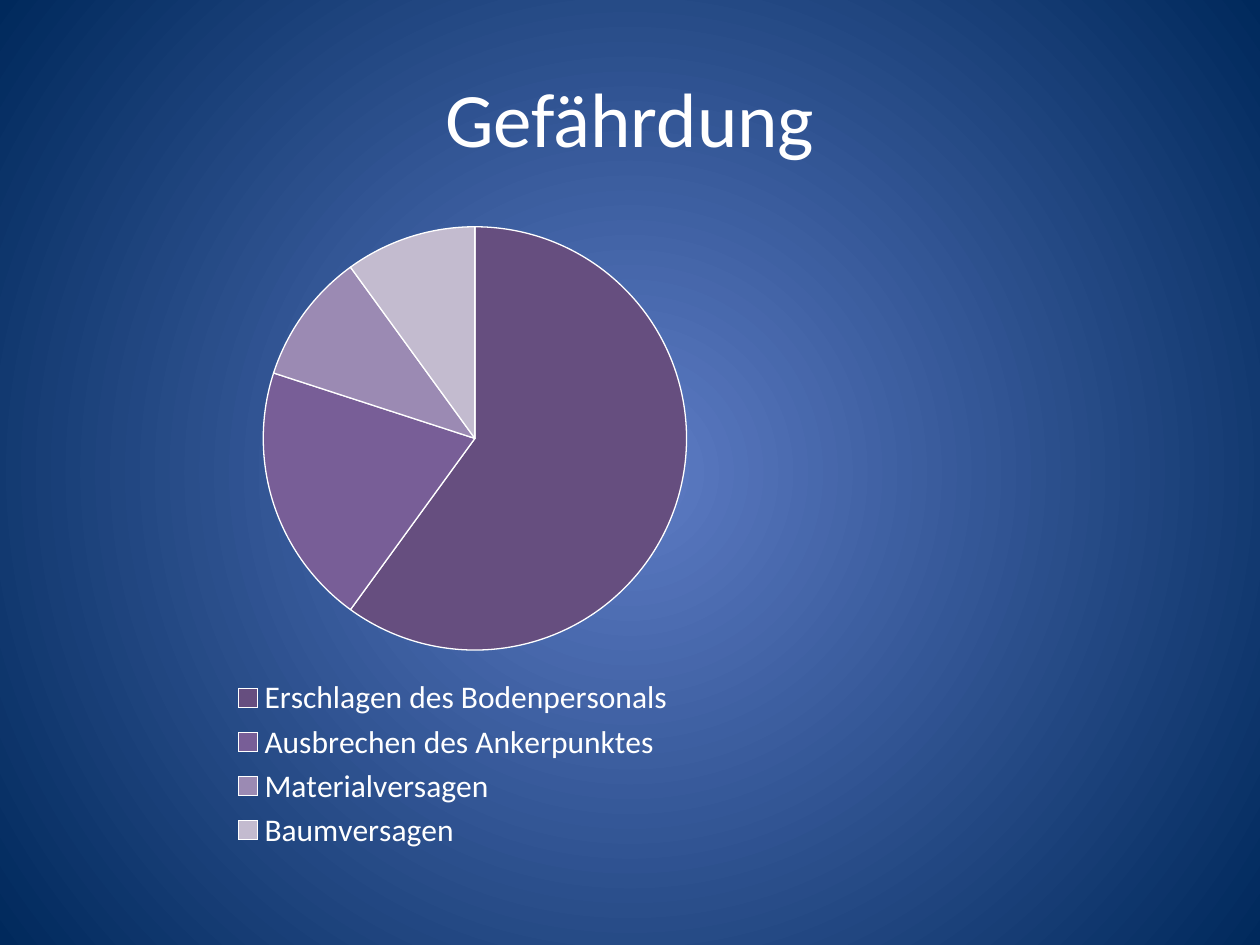
from lxml import etree
from pptx import Presentation
from pptx.chart.data import CategoryChartData
from pptx.dml.color import RGBColor
from pptx.enum.chart import XL_CHART_TYPE as CT, XL_LEGEND_POSITION as LP
from pptx.enum.text import MSO_ANCHOR, PP_ALIGN
from pptx.oxml.ns import qn
from pptx.util import Inches, Pt

COLORS = {
    "glow": "5E7CC5", "navy": "00295C", "white": "FFFFFF",
    "plum": "664E7F", "violet": "785E97", "mauve": "9B8AB3", "lilac": "C3BBCF",
}
RISKS = [
    ("Erschlagen des Bodenpersonals", 60, "plum"),
    ("Ausbrechen des Ankerpunktes", 20, "violet"),
    ("Materialversagen", 10, "mauve"),
    ("Baumversagen", 10, "lilac"),
]


def color(name):
    return RGBColor.from_string(COLORS[name])


class SlideBuilder:
    font = "Calibri"

    def __init__(self, prs):
        self.s = prs.slides.add_slide(prs.slide_layouts[5])

    def style(self, font, size):
        font.name, font.size = self.font, Pt(size)
        font.color.rgb = color("white")

    def background(self, inner, outer):
        fill = self.s.background.fill
        fill.gradient()
        for stop, name, pos in zip(fill.gradient_stops, (inner, outer), (0, 1)):
            stop.color.rgb = color(name)
            stop.position = pos
        # Radial path from the slide centre instead of a linear gradient
        grad = self.s.background._cSld.find(".//" + qn("a:gradFill"))
        lin = grad.find(qn("a:lin"))
        radial = etree.Element(qn("a:path"), {"path": "circle"})
        etree.SubElement(radial, qn("a:fillToRect"),
                         {side: "50000" for side in "ltrb"})
        grad.replace(lin, radial)

    def title(self, text, x, y, w, h):
        sp = self.s.shapes.title
        sp.left, sp.top, sp.width, sp.height = map(Inches, (x, y, w, h))
        tf = sp.text_frame
        tf.vertical_anchor = MSO_ANCHOR.MIDDLE
        p = tf.paragraphs[0]
        p.alignment = PP_ALIGN.CENTER
        r = p.add_run()
        r.text = text
        self.style(r.font, 44)

    def layout(self, parent, before, box, size, inner=False):
        """Place a chart part; box and chart size are in inches."""
        for old in parent.findall(qn("c:layout")):
            parent.remove(old)
        lay = etree.Element(qn("c:layout"))
        manual = etree.SubElement(lay, qn("c:manualLayout"))
        items = [("layoutTarget", "inner")] if inner else []
        items += [("xMode", "edge"), ("yMode", "edge")]
        items += [(tag, length / full)
                  for tag, length, full in zip("xywh", box, size * 2)]
        for tag, val in items:
            etree.SubElement(manual, qn("c:" + tag), val=str(val))
        parent.find(qn(before)).addprevious(lay)

    def pie(self, rows, x, y, w, h, plot_box, legend_box):
        data = CategoryChartData()
        data.categories = [name for name, _, _ in rows]
        data.add_series("Series 1", [value for _, value, _ in rows])
        chart = self.s.shapes.add_chart(
            CT.PIE, *map(Inches, (x, y, w, h)), data).chart
        chart.has_title = False
        self.style(chart.font, 18)

        # Slices
        plot = chart.plots[0]
        plot.vary_by_categories = True
        for i, (_, _, name) in enumerate(rows):
            fmt = plot.series[0].points[i].format
            fmt.fill.solid()
            fmt.fill.fore_color.rgb = color(name)
            fmt.line.color.rgb = color("white")
            fmt.line.width = Pt(0.75)

        # Legend below the pie
        chart.has_legend = True
        legend = chart.legend
        legend.position = LP.BOTTOM
        legend.include_in_layout = False
        self.style(legend.font, 18)
        self.layout(legend._element, "c:overlay", legend_box, (w, h))
        area = chart._chartSpace.find(".//" + qn("c:plotArea"))
        self.layout(area, "c:pieChart", plot_box, (w, h), inner=True)


def main():
    prs = Presentation()
    prs.slide_width, prs.slide_height = Inches(10), Inches(7.5)
    slide = SlideBuilder(prs)
    slide.background("glow", "navy")
    slide.title("Gefährdung", 0.5, 0.3, 9, 1.25)
    slide.pie(RISKS, 0.16, 1.56, 6.95, 5.23,
              plot_box=(0.31, 0.24, 6.6, 3.36),
              legend_box=(1.49, 3.78, 3.89, 1.46))
    prs.save("out.pptx")


if __name__ == "__main__":
    main()
